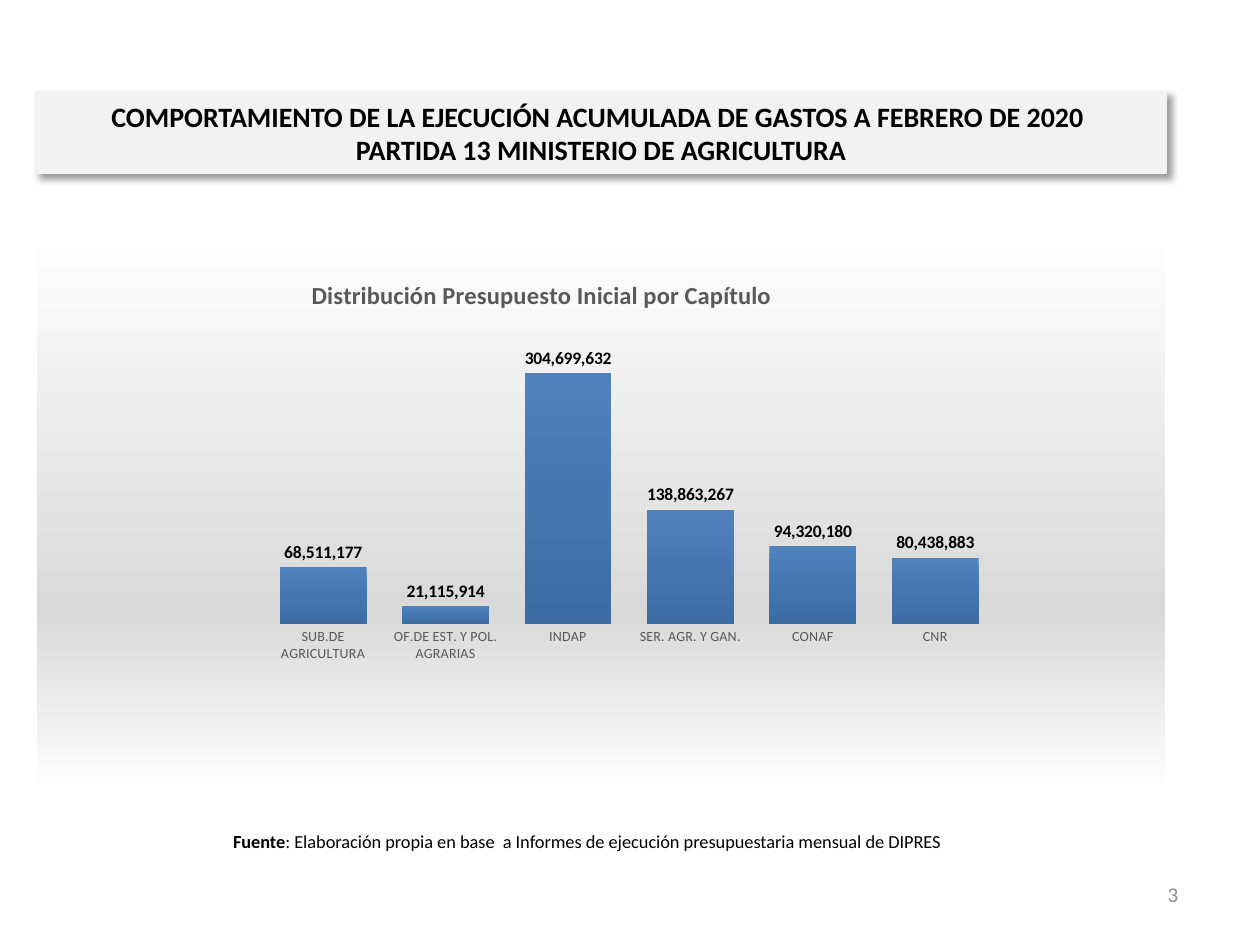
import pptx
import pptx.chart.data
import pptx.dml.color
import pptx.enum.chart
import pptx.enum.text
import pptx.oxml
import pptx.oxml.ns
import pptx.util
from pptx.util import Inches

THEME = {
    "font": "Calibri",
    "black": "000000", "gray": "595959", "number": "8C8C8C",
    "panel": "F2F2F2", "white": "FFFFFF",
    "bar_stops": [(0, "4F81BD"), (100, "3D6CA4")],
    "chart_stops": [(0, "FFFFFF"), (68, "D9D9D9"), (100, "FFFFFF")],
    "title_size": 16, "chart_title_size": 14, "number_size": 12,
    "source_size": 10.5, "label_size": 10, "axis_size": 8,
}
DRAWING = ('xmlns:a="http://schemas.openxmlformats.org/drawingml/2006/main" '
           'xmlns:c="http://schemas.openxmlformats.org/drawingml/2006/chart"')


def style(font, size, color, bold=False):
    values = {"name": THEME["font"], "size": pptx.util.Pt(size), "bold": bold}
    for name, value in values.items():
        setattr(font, name, value)
    font.color.rgb = pptx.dml.color.RGBColor.from_string(color)


def vertical_gradient(stops):
    stop_xml = "".join(
        f'<a:gs pos="{position * 1000}"><a:srgbClr val="{color}"/></a:gs>'
        for position, color in stops)
    return pptx.oxml.parse_xml(
        f'<a:gradFill {DRAWING} rotWithShape="1"><a:gsLst>{stop_xml}</a:gsLst>'
        '<a:lin ang="5400000" scaled="0"/></a:gradFill>')


presentation = pptx.Presentation()
presentation.slide_width, presentation.slide_height = Inches(10), Inches(7.5)
slide = presentation.slides.add_slide(presentation.slide_layouts[5])

# Title panel
title = slide.shapes.title
title.left, title.top = Inches(0.28), Inches(0.73)
title.width, title.height = Inches(8.98), Inches(0.65)
title.fill.solid()
panel_color = pptx.dml.color.RGBColor.from_string(THEME["panel"])
title.fill.fore_color.rgb = panel_color
title.line.color.rgb = panel_color
title.line.width = pptx.util.Pt(0.75)
title.element.spPr.append(pptx.oxml.parse_xml(
    f'<a:effectLst {DRAWING}><a:outerShdw blurRad="50800" dist="38100" dir="2700000" '
    'algn="tl" rotWithShape="0"><a:srgbClr val="000000"><a:alpha val="40000"/>'
    '</a:srgbClr></a:outerShdw></a:effectLst>'))
frame = title.text_frame
frame.text = ("COMPORTAMIENTO DE LA EJECUCIÓN ACUMULADA DE GASTOS A FEBRERO DE 2020 \v"
              "PARTIDA 13 MINISTERIO DE AGRICULTURA")
frame.auto_size = pptx.enum.text.MSO_AUTO_SIZE.NONE
frame.vertical_anchor = pptx.enum.text.MSO_ANCHOR.MIDDLE
frame.paragraphs[0].alignment = pptx.enum.text.PP_ALIGN.CENTER
for run in frame.paragraphs[0].runs:
    style(run.font, THEME["title_size"], THEME["black"], True)

# Source note and page number
center, right = pptx.enum.text.PP_ALIGN.CENTER, pptx.enum.text.PP_ALIGN.RIGHT
source = ": Elaboración propia en base  a Informes de ejecución presupuestaria mensual de DIPRES"
notes = [
    (0.42, 6.48, 8.48, center, THEME["source_size"], THEME["black"],
     [("Fuente", True), (source, False)]),
    (7.12, 6.9, 2.33, right, THEME["number_size"], THEME["number"], [("3", False)]),
]
for left, top, width, alignment, size, color, runs in notes:
    box = slide.shapes.add_textbox(Inches(left), Inches(top), Inches(width), Inches(0.4))
    box.text_frame.word_wrap = True
    box.text_frame.vertical_anchor = pptx.enum.text.MSO_ANCHOR.MIDDLE
    paragraph = box.text_frame.paragraphs[0]
    paragraph.alignment = alignment
    for text, bold in runs:
        run = paragraph.add_run()
        run.text = text
        style(run.font, size, color, bold)

# Budget by chapter
budgets = {
    "SUB.DE AGRICULTURA": 68511177,
    "OF.DE EST. Y POL. AGRARIAS": 21115914,
    "INDAP": 304699632,
    "SER. AGR. Y GAN.": 138863267,
    "CONAF": 94320180,
    "CNR": 80438883,
}
chart_data = pptx.chart.data.CategoryChartData(number_format="#,##0")
chart_data.categories = list(budgets)
chart_data.add_series("Series 1", list(budgets.values()))
chart = slide.shapes.add_chart(
    pptx.enum.chart.XL_CHART_TYPE.COLUMN_CLUSTERED,
    Inches(0.28), Inches(1.81), Inches(8.98), Inches(4.49), chart_data).chart
style(chart.font, THEME["label_size"], THEME["black"])
chart.has_legend = False
chart.has_title = True
chart.chart_title.text_frame.text = "Distribución Presupuesto Inicial por Capítulo"
style(chart.chart_title.text_frame.paragraphs[0].runs[0].font,
      THEME["chart_title_size"], THEME["gray"], True)

category_axis, value_axis = chart.category_axis, chart.value_axis
category_axis.major_tick_mark = pptx.enum.chart.XL_TICK_MARK.NONE
category_axis.format.line.fill.background()
style(category_axis.tick_labels.font, THEME["axis_size"], THEME["gray"])
value_axis.visible = False
value_axis.has_major_gridlines = False
value_axis.minimum_scale, value_axis.maximum_scale = 0, 350000000

plot = chart.plots[0]
plot.gap_width = 41
plot.vary_by_categories = False
plot.has_data_labels = True
labels = plot.data_labels
labels.show_value = True
labels.number_format, labels.number_format_is_linked = "#,##0", False
labels.position = pptx.enum.chart.XL_LABEL_POSITION.OUTSIDE_END
style(labels.font, THEME["label_size"], THEME["black"], True)

series = plot.series[0]
series.invert_if_negative = False
series.format.fill.background()
bar_fill = series.format.fill._xPr
bar_fill.replace(bar_fill[0], vertical_gradient(THEME["bar_stops"]))

# Chart background, title place and plot area
chart_space = chart.element
background = pptx.oxml.parse_xml(
    f'<c:spPr {DRAWING}><a:ln w="9525"><a:solidFill><a:srgbClr val="{THEME["white"]}"/>'
    '</a:solidFill></a:ln></c:spPr>')
background.insert(0, vertical_gradient(THEME["chart_stops"]))
chart_space.find(pptx.oxml.ns.qn("c:chart")).addnext(background)

layouts = [
    ("c:title", "", {"x": 0.24, "y": 0.08}),
    ("c:plotArea", '<c:layoutTarget val="inner"/>',
     {"x": 0.2, "y": 0.19, "w": 0.65, "h": 0.51}),
]
for tag, target, place in layouts:
    parent = next(chart_space.iter(pptx.oxml.ns.qn(tag)))
    for old_layout in parent.findall(pptx.oxml.ns.qn("c:layout")):
        parent.remove(old_layout)
    modes = "".join(f'<c:{key}Mode val="edge"/>' for key in "xy")
    values = "".join(f'<c:{key} val="{value}"/>' for key, value in place.items())
    layout = pptx.oxml.parse_xml(
        f"<c:layout {DRAWING}><c:manualLayout>{target}{modes}{values}"
        "</c:manualLayout></c:layout>")
    parent.insert(1 if tag == "c:title" else 0, layout)

presentation.save("out.pptx")
